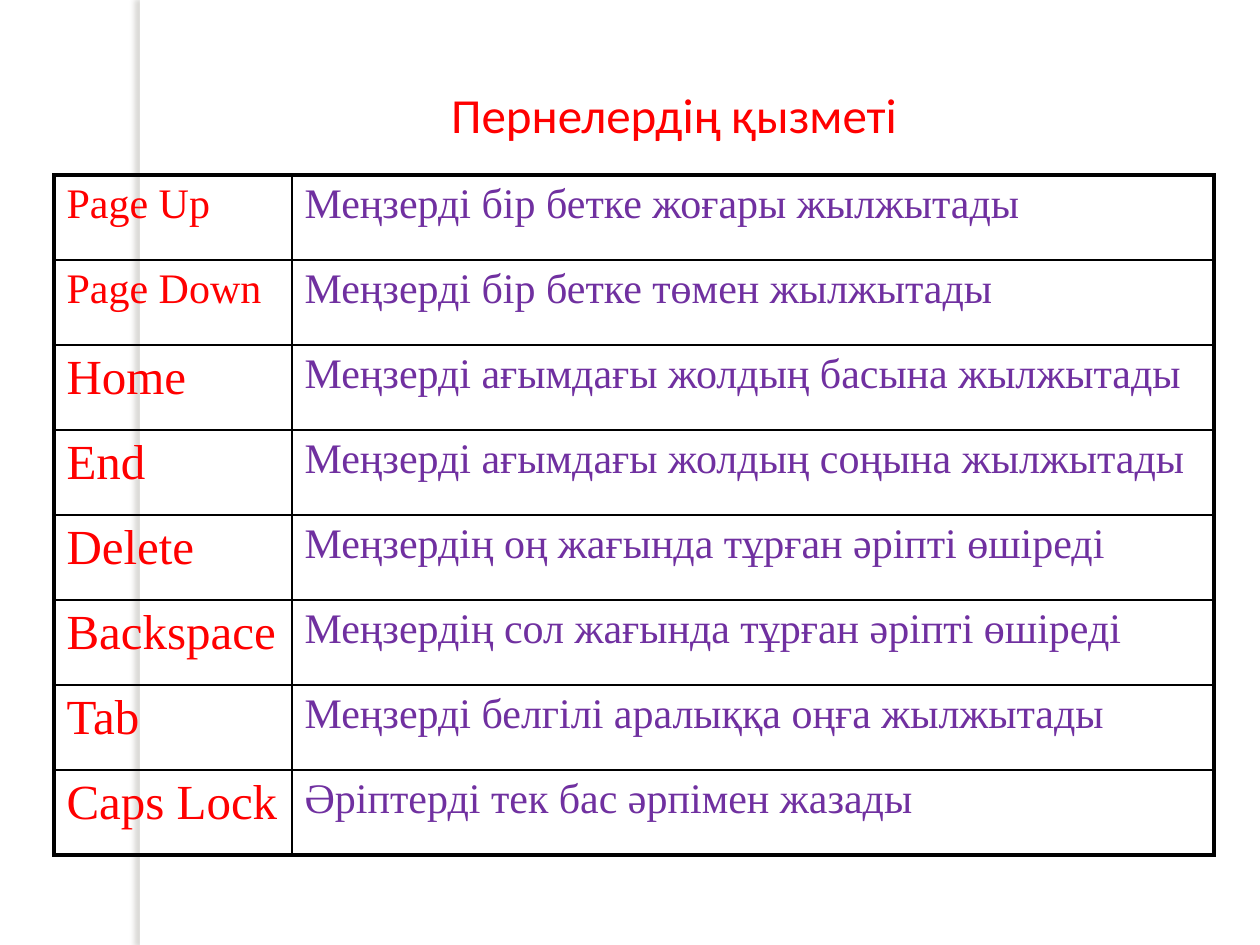
from lxml.etree import SubElement
from pptx import Presentation
from pptx.dml.color import RGBColor
from pptx.enum.shapes import MSO_SHAPE as Shape
from pptx.enum.text import MSO_ANCHOR as Anchor, MSO_AUTO_SIZE as AutoSize, PP_ALIGN as Align
from pptx.oxml import parse_xml
from pptx.oxml.ns import nsdecls, qn
from pptx.util import Emu, Pt

SCALE = 914400 / 126
RED, PURPLE, BLACK, WHITE = "FF0000", "7030A0", "000000", "FFFFFF"
THICK, THIN = 2.25, 1
KEYS = [
    ("Page Up", 24, "Меңзерді бір бетке жоғары жылжытады"),
    ("Page Down", 24, "Меңзерді бір бетке төмен жылжытады"),
    ("Home", 28, "Меңзерді ағымдағы жолдың басына жылжытады"),
    ("End", 28, "Меңзерді ағымдағы жолдың соңына жылжытады"),
    ("Delete", 28, "Меңзердің оң жағында тұрған әріпті өшіреді"),
    ("Backspace", 28, "Меңзердің сол жағында тұрған әріпті өшіреді"),
    ("Tab", 28, "Меңзерді белгілі аралыққа оңға жылжытады"),
    ("Caps Lock", 28, "Әріптерді тек бас әрпімен жазады"),
]


def px(length):
    return Emu(round(length * SCALE))


def color(value):
    return RGBColor.from_string(value)


class SlideBuilder:
    """Draws styled elements on the current page."""

    def __init__(self, page, title_font, body_font):
        self.page = page
        self.title_font = title_font
        self.body_font = body_font

    def add_span(self, para, text, size, hue, font):
        span = para.add_run()
        span.text = text
        span.font.size = Pt(size)
        span.font.name = font
        span.font.color.rgb = color(hue)

    def strip(self, x, y, width, height):
        box = self.page.shapes.add_shape(Shape.RECTANGLE, px(x), px(y), px(width), px(height))
        box.fill.solid()
        box.fill.fore_color.rgb = color(WHITE)
        box.line.fill.background()
        box.shadow.inherit = False
        effects = box.element.spPr.find(qn("a:effectLst"))
        effects.append(parse_xml(
            f'<a:outerShdw {nsdecls("a")} blurRad="{Pt(3)}" dist="{Pt(3)}" dir="10800000" '
            'algn="tl" rotWithShape="0"><a:srgbClr val="736F63"><a:alpha val="25000"/>'
            "</a:srgbClr></a:outerShdw>"))

    def title(self, text, x, y, width, height):
        box = self.page.shapes.title
        box.left, box.top, box.width, box.height = map(px, (x, y, width, height))
        frame = box.text_frame
        frame.word_wrap = True
        frame.auto_size = AutoSize.SHAPE_TO_FIT_TEXT
        frame.vertical_anchor = Anchor.TOP
        para = frame.paragraphs[0]
        para.alignment = Align.CENTER
        self.add_span(para, text, 28, RED, self.title_font)

    def border(self, cell, widths):
        properties = cell._tc.get_or_add_tcPr()
        for side, width in zip("LRTB", widths):
            line = SubElement(properties, qn(f"a:ln{side}"), w=str(Pt(width)))
            fill = SubElement(line, qn("a:solidFill"))
            SubElement(fill, qn("a:srgbClr"), val=BLACK)

    def table(self, rows, x, y, columns, row_height):
        grid = self.page.shapes.add_table(
            len(rows), len(columns), px(x), px(y),
            px(sum(columns)), px(row_height * len(rows))).table
        grid.first_row = grid.horz_banding = False
        for column, width in zip(grid.columns, columns):
            column.width = px(width)
        for r, (key, size, meaning) in enumerate(rows):
            grid.rows[r].height = px(row_height)
            for c, (text, points, hue) in enumerate([(key, size, RED), (meaning, 24, PURPLE)]):
                cell = grid.cell(r, c)
                outer = (c == 0, c == len(columns) - 1, r == 0, r == len(rows) - 1)
                self.border(cell, [THICK if edge else THIN for edge in outer])
                cell.fill.background()
                self.add_span(cell.text_frame.paragraphs[0], text, points, hue, self.body_font)


def main():
    deck = Presentation()
    deck.slide_width, deck.slide_height = px(1260), px(945)
    page = deck.slides.add_slide(deck.slide_layouts[5])
    builder = SlideBuilder(page, "Calibri", "Times New Roman")
    builder.strip(140, 0, 10, 945)
    builder.title("Пернелердің қызметі", 168, 78, 1012, 72)
    builder.table(KEYS, 54, 175, [238, 922], 85)
    deck.save("out.pptx")


if __name__ == "__main__":
    main()
